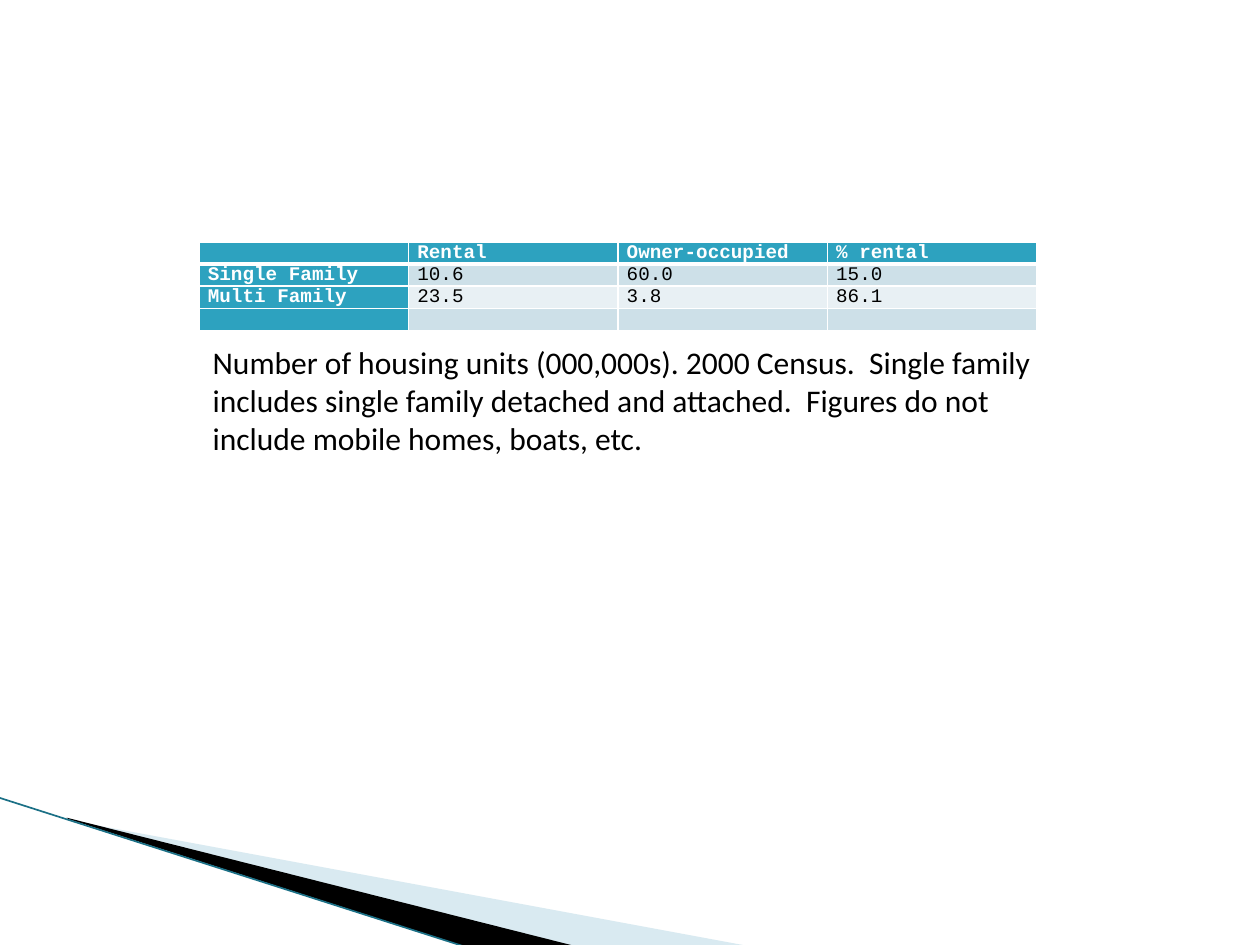
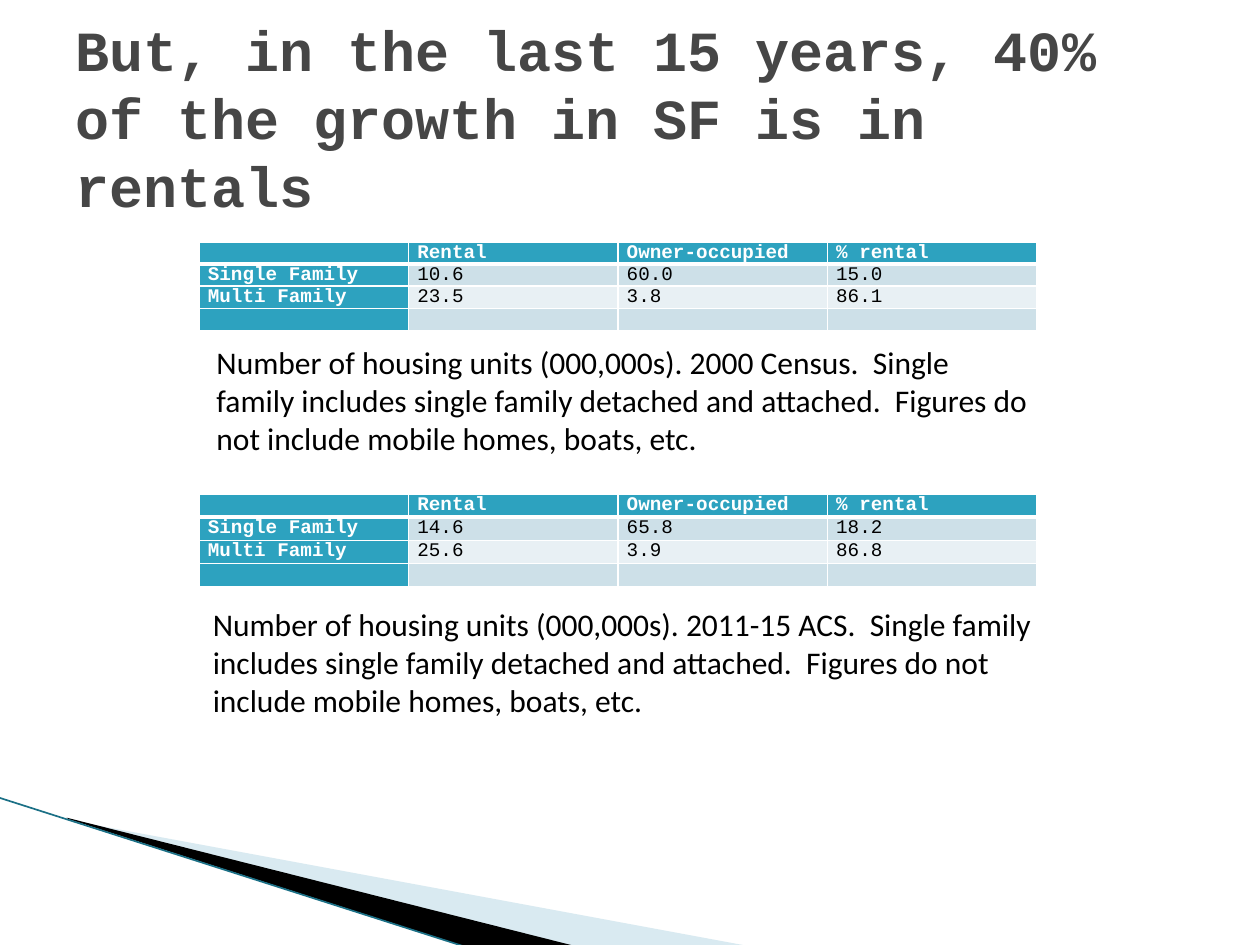
"""Build two slides on rental and owner-occupied housing units."""
from lxml.etree import SubElement
from pptx import Presentation
from pptx.dml.color import RGBColor
from pptx.enum.shapes import MSO_CONNECTOR
from pptx.enum.text import MSO_ANCHOR, MSO_AUTO_SIZE, PP_ALIGN
from pptx.oxml.ns import qn
from pptx.util import Inches, Pt

WHITE = RGBColor(0xFF, 0xFF, 0xFF)
BLACK = RGBColor(0x00, 0x00, 0x00)
TITLE_GRAY = RGBColor(0x46, 0x46, 0x46)
TEAL = RGBColor(0x2D, 0xA2, 0xBF)
DARK_TEAL = RGBColor(0x1B, 0x70, 0x86)
PALE_BLUE = RGBColor(0xA0, 0xCB, 0xDC)
BANDS = [RGBColor(0xCD, 0xE0, 0xE8), RGBColor(0xE8, 0xF0, 0xF4)]
MONO = "Courier New"
BODY = "Calibri"

HEADER = ["", "Rental", "Owner-occupied", "% rental"]
CENSUS_2000 = [["Single Family", "10.6", "60.0", "15.0"],
               ["Multi Family", "23.5", "3.8", "86.1"]]
ACS_2015 = [["Single Family", "14.6", "65.8", "18.2"],
            ["Multi Family", "25.6", "3.9", "86.8"]]
NOTE = ("Number of housing units (000,000s). {}.  Single family includes single family "
        "detached and attached.  Figures do not include mobile homes, boats, etc.")
WEDGES = [
    ([(0.55, 6.51), (5.95, 7.51), (4.56, 7.51), (0.55, 6.5)], PALE_BLUE, 40),
    ([(0.53, 6.49), (4.57, 7.51), (3.72, 7.52), (0.54, 6.5)], BLACK, 100),
]


def add_housing_table(slide, top, row_height, figures):
    rows = [HEADER, *figures, [""] * len(HEADER)]
    table = slide.shapes.add_table(
        len(rows), len(HEADER), Inches(1.58), Inches(top),
        Inches(6.65), Inches(row_height * len(rows))).table
    table.first_col = True
    for r, values in enumerate(rows):
        for c, value in enumerate(values):
            cell = table.cell(r, c)
            cell.margin_left = cell.margin_right = Inches(0.07)
            cell.margin_top = cell.margin_bottom = 0
            widths = {"lnL": 1, "lnR": 1, "lnT": 3 if r == 1 else 1, "lnB": 3 if r == 0 else 1}
            for side, width in widths.items():
                border = SubElement(cell._tc.get_or_add_tcPr(), qn(f"a:{side}"), w=str(Pt(width)))
                SubElement(SubElement(border, qn("a:solidFill")), qn("a:srgbClr"), val=str(WHITE))
            heading = r == 0 or c == 0
            cell.fill.solid()
            cell.fill.fore_color.rgb = TEAL if heading else BANDS[(r - 1) % 2]
            cell.text = value
            paragraph = cell.text_frame.paragraphs[0]
            paragraph.font.name = MONO
            paragraph.font.size = Pt(11)
            paragraph.font.bold = heading
            paragraph.font.color.rgb = WHITE if heading else BLACK
            if not value:
                SubElement(paragraph._p, qn("a:endParaRPr"), sz="1100")


def add_note(slide, left, top, width, survey):
    frame = slide.shapes.add_textbox(
        Inches(left), Inches(top), Inches(width), Inches(1.01)).text_frame
    frame.word_wrap = True
    frame.vertical_anchor = MSO_ANCHOR.MIDDLE
    frame.text = NOTE.format(survey)
    font = frame.paragraphs[0].font
    font.name = BODY
    font.size = Pt(18)
    font.color.rgb = BLACK


prs = Presentation()
prs.slide_width = Inches(10)
prs.slide_height = Inches(7.5)
census_slide = prs.slides.add_slide(prs.slide_layouts[6])
growth_slide = prs.slides.add_slide(prs.slide_layouts[5])

for slide in (census_slide, growth_slide):
    for points, color, opacity in WEDGES:
        corners = [(Inches(x), Inches(y)) for x, y in points]
        builder = slide.shapes.build_freeform(*corners[0])
        builder.add_line_segments(corners[1:])
        wedge = builder.convert_to_shape()
        wedge.shadow.inherit = False
        wedge.line.fill.background()
        wedge.fill.solid()
        wedge.fill.fore_color.rgb = color
        if opacity < 100:
            tint = wedge._element.spPr.find(f"{qn('a:solidFill')}/{qn('a:srgbClr')}")
            SubElement(tint, qn("a:alpha"), val=str(opacity * 1000))
    edge = slide.shapes.add_connector(
        MSO_CONNECTOR.STRAIGHT, Inches(-0.01), Inches(6.33), Inches(3.71), Inches(7.52))
    edge.line.color.rgb = DARK_TEAL
    edge.line.width = Pt(0.95)
    SubElement(edge._element.spPr, qn("a:effectLst"))
    add_housing_table(slide, 1.92, 0.175, CENSUS_2000)

add_note(census_slide, 1.59, 2.67, 7, "2000 Census")

title = growth_slide.shapes.title
title.left, title.top = Inches(0.5), Inches(0.3)
title.width, title.height = Inches(9), Inches(1.25)
title.text_frame.text = "But, in the last 15 years, 40% of the growth in SF is in rentals"
title.text_frame.auto_size = MSO_AUTO_SIZE.NONE
title.text_frame.vertical_anchor = MSO_ANCHOR.MIDDLE
headline = title.text_frame.paragraphs[0]
headline.alignment = PP_ALIGN.LEFT
headline.font.name = MONO
headline.font.size = Pt(32.4)
headline.font.bold = True
headline.font.color.rgb = TITLE_GRAY

add_note(growth_slide, 1.62, 2.67, 6.67, "2000 Census")
add_housing_table(growth_slide, 3.92, 0.18, ACS_2015)
add_note(growth_slide, 1.59, 4.75, 6.72, "2011-15 ACS")

prs.save("out.pptx")
